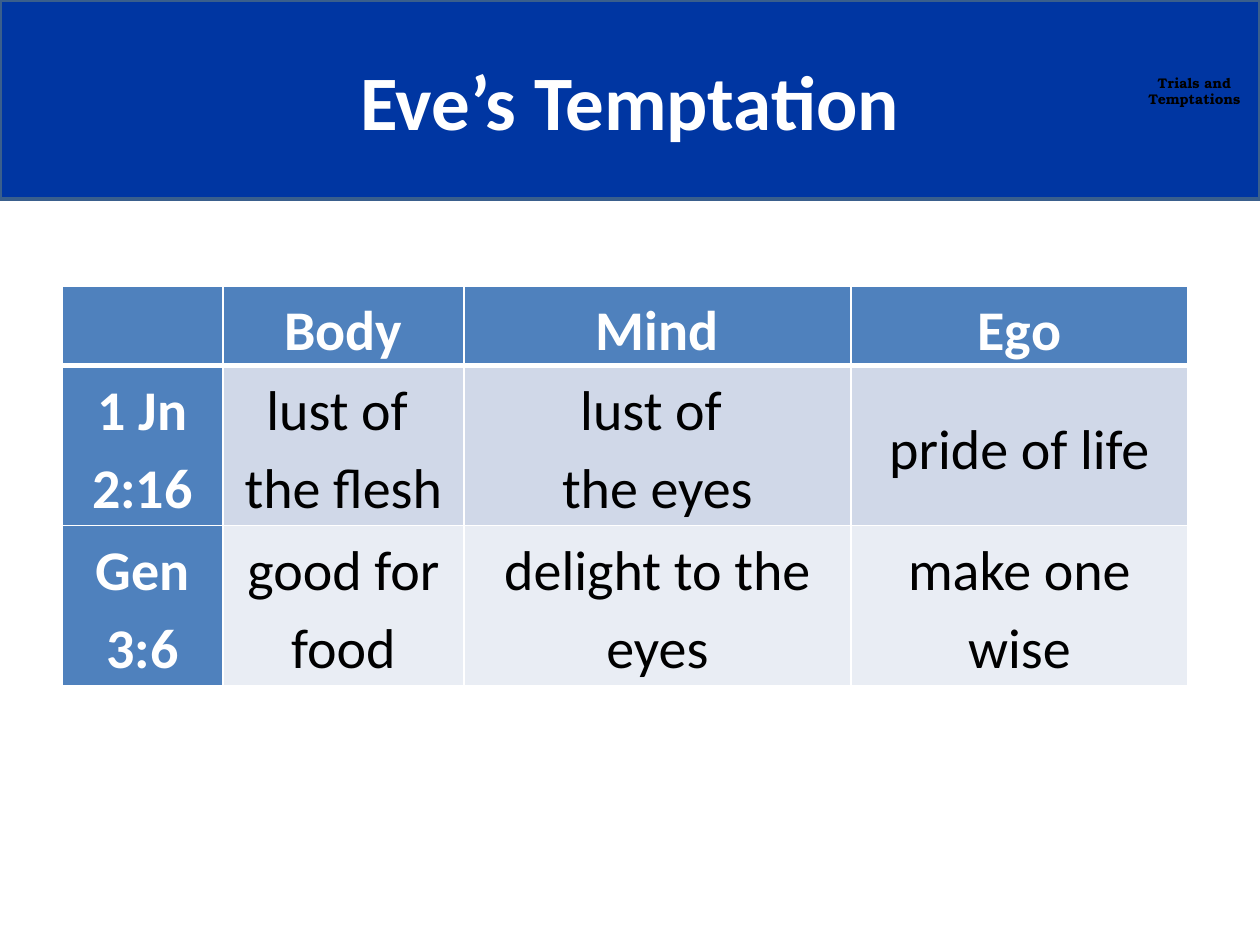
import pptx
import pptx.dml.color
import pptx.enum.shapes
import pptx.enum.text
import pptx.oxml
import pptx.oxml.ns
import pptx.util

EMU_PER_PX = 914400 / 126
ANCHOR = pptx.enum.text.MSO_ANCHOR
WHITE, BLACK, HEADER = "FFFFFF", "000000", "4F81BD"
BANDS = ["D0D8E8", "E9EDF4"]

COLUMNS = [161, 241, 387, 337]
ROWS = [79, 160, 160]
CELLS = [
    ["", "Body", "Mind", "Ego"],
    ["1 Jn 2:16", "lust of \nthe flesh", "lust of \nthe eyes", "pride of life"],
    ["Gen 3:6", "good for food", "delight to the eyes", "make one wise"],
]


def px(n):
    return pptx.util.Emu(round(n * EMU_PER_PX))


def rgb(value):
    return pptx.dml.color.RGBColor.from_string(value)


def write(tf, text, size, color, font="Calibri", bold=True, spacing=None):
    """Fill a text frame with centred paragraphs, one per line of text."""
    for i, line in enumerate(text.split("\n")):
        p = tf.paragraphs[0] if i == 0 else tf.add_paragraph()
        p.alignment = pptx.enum.text.PP_ALIGN.CENTER
        p.line_spacing = spacing
        r = p.add_run()
        r.text = line
        r.font.size = pptx.util.Pt(size)
        r.font.name = font
        r.font.bold = bold
        r.font.color.rgb = rgb(color)


def add_band(slide, x, y, w, h):
    sp = slide.shapes.add_shape(
        pptx.enum.shapes.MSO_SHAPE.RECTANGLE, px(x), px(y), px(w), px(h))
    sp.shadow.inherit = False
    sp.fill.solid()
    sp.fill.fore_color.rgb = rgb("0036A2")
    sp.line.color.rgb = rgb("3A5F8C")
    sp.line.width = pptx.util.Pt(2)


def add_text(slide, text, x, y, w, h, size, color, anchor=ANCHOR.TOP, **fmt):
    tf = slide.shapes.add_textbox(px(x), px(y), px(w), px(h)).text_frame
    tf.word_wrap = True
    tf.vertical_anchor = anchor
    write(tf, text, size, color, **fmt)


def set_borders(cell, bottom):
    """Draw white borders, 1 pt except for the given bottom width."""
    tc_pr = cell._tc.get_or_add_tcPr()
    widths = {"lnL": 1, "lnR": 1, "lnT": 1, "lnB": bottom}
    for i, (tag, width) in enumerate(widths.items()):
        tc_pr.insert(i, pptx.oxml.parse_xml(
            f'<a:{tag} {pptx.oxml.ns.nsdecls("a")} w="{pptx.util.Pt(width)}">'
            f'<a:solidFill><a:srgbClr val="{WHITE}"/></a:solidFill></a:{tag}>'))


def add_table(slide, x, y):
    table = slide.shapes.add_table(
        len(ROWS), len(COLUMNS), px(x), px(y), px(sum(COLUMNS)), px(sum(ROWS))).table
    for column, width in zip(table.columns, COLUMNS):
        column.width = px(width)
    for row, height in zip(table.rows, ROWS):
        row.height = px(height)

    for i, texts in enumerate(CELLS):
        for j, text in enumerate(texts):
            cell = table.cell(i, j)
            heading = i == 0 or j == 0
            cell.fill.solid()
            cell.fill.fore_color.rgb = rgb(HEADER if heading else BANDS[i - 1])
            cell.margin_left = cell.margin_right = px(1)
            cell.margin_top = cell.margin_bottom = px(1)
            cell.vertical_anchor = ANCHOR.MIDDLE
            set_borders(cell, bottom=3 if i == 0 else 1)
            if text:
                write(cell.text_frame, text, 32, WHITE if heading else BLACK,
                      bold=heading, spacing=1.15)


def main():
    prs = pptx.Presentation()
    prs.slide_width, prs.slide_height = px(1260), px(945)
    slide = prs.slides.add_slide(prs.slide_layouts[6])

    # Title band with the series name at its right
    add_band(slide, 0, 0, 1260, 199)
    add_text(slide, "Trials and\nTemptations", 1125, 68, 139, 47, 8, BLACK,
             font="TeX Gyre Bonum")
    add_text(slide, "Eve’s Temptation", 0, 21, 1260, 158, 44, WHITE,
             anchor=ANCHOR.MIDDLE)

    # Comparison of the two passages
    add_table(slide, 62, 286)

    prs.save("out.pptx")


if __name__ == "__main__":
    main()
